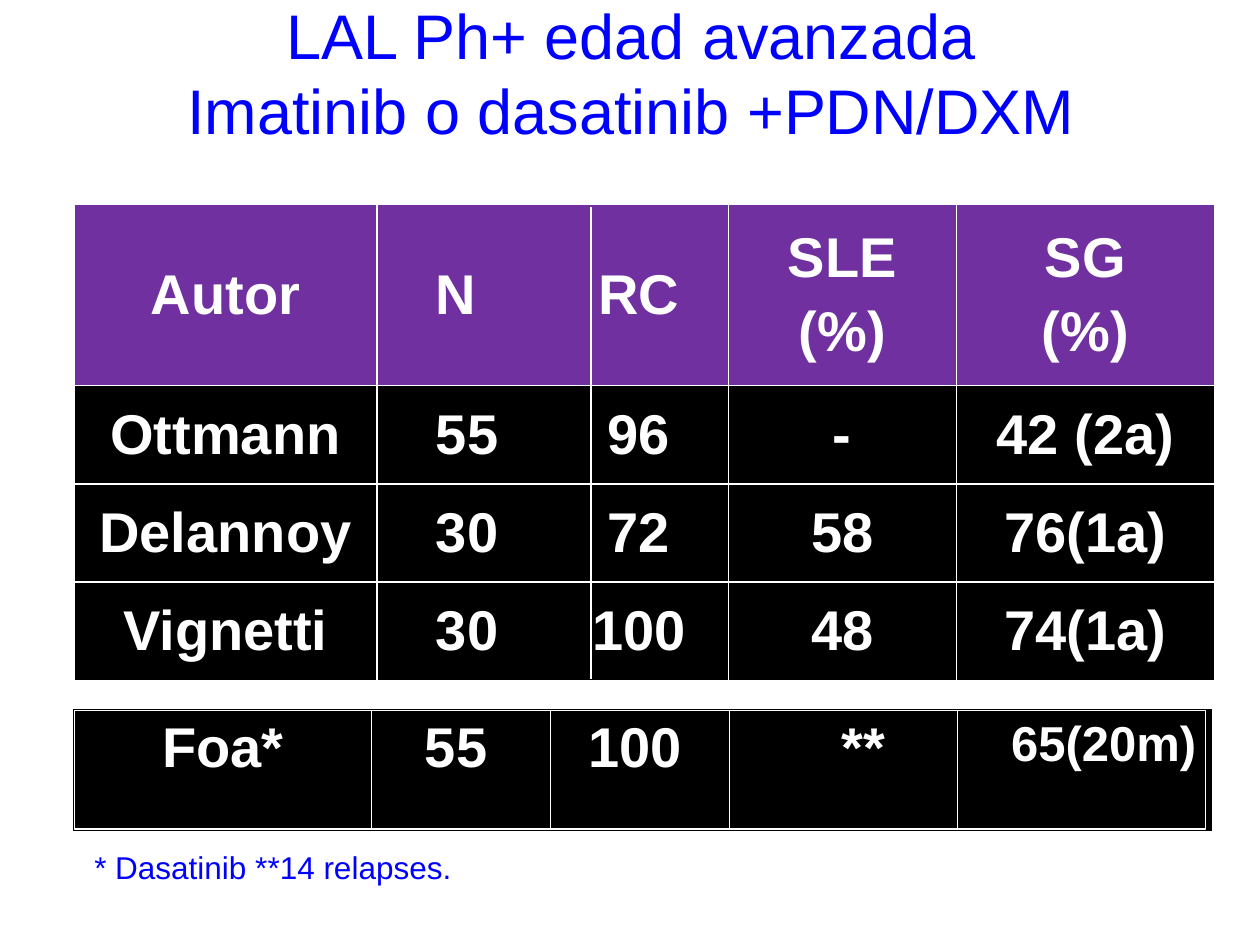
from lxml import etree
from pptx import Presentation
from pptx.dml.color import RGBColor
from pptx.enum.shapes import MSO_CONNECTOR, MSO_SHAPE
from pptx.enum.text import MSO_ANCHOR, MSO_AUTO_SIZE, PP_ALIGN
from pptx.oxml.ns import qn
from pptx.util import Inches, Pt

LINE = MSO_CONNECTOR.STRAIGHT
RECT = MSO_SHAPE.RECTANGLE
TOP, MIDDLE, BOTTOM = MSO_ANCHOR.TOP, MSO_ANCHOR.MIDDLE, MSO_ANCHOR.BOTTOM
NO_FIT, GROW = MSO_AUTO_SIZE.NONE, MSO_AUTO_SIZE.SHAPE_TO_FIT_TEXT
LEFT, CENTER = PP_ALIGN.LEFT, PP_ALIGN.CENTER

WHITE, BLACK, BLUE, PURPLE = "FFFFFF", "000000", "0000FF", "7030A0"
TRIALS = [
    ["Autor", "N\tRC", "SLE\n(%)", "SG\n(%)"],
    ["Ottmann", "55\t96", "-", "42 (2a)"],
    ["Delannoy", "30\t72", "58", "76(1a)"],
    ["Vignetti", "30\t100", "48", "74(1a)"],
]
FOA = ["Foa*", "55", "100", "**", "65(20m)"]


def color(code):
    """Turn a hex string into a colour."""
    return RGBColor.from_string(code)


def style(para, size, code, bold=False, align=CENTER):
    """Set the font and alignment of a paragraph."""
    para.alignment = align
    font = para.font
    font.name, font.size, font.bold = "Arial", Pt(size), bold
    font.color.rgb = color(code)


def add_tab(para, pos):
    """Give a paragraph one centred tab stop."""
    stops = etree.SubElement(para._p.get_or_add_pPr(), qn("a:tabLst"))
    etree.SubElement(stops, qn("a:tab"), pos=str(Inches(pos)), algn="ctr")


def border(cell, code, widths):
    """Draw the left, right, top and bottom borders of a cell."""
    props = cell._tc.get_or_add_tcPr()
    for spot, (side, width) in enumerate(zip("LRTB", widths)):
        edge = etree.Element(qn(f"a:ln{side}"), w=str(Pt(width)))
        fill = etree.SubElement(edge, qn("a:solidFill"))
        etree.SubElement(fill, qn("a:srgbClr"), val=code)
        props.insert(spot, edge)


def fill_cell(cell, text, back, size=32, anchor=MIDDLE):
    """Write one bold white cell, splitting it at a tab if it has one."""
    cell.fill.solid()
    cell.fill.fore_color.rgb = color(back)
    cell.vertical_anchor = anchor
    cell.text = text
    split = "\t" in text
    if split:
        cell.margin_left = Inches(0.47)
    for para in cell.text_frame.paragraphs:
        para.space_before = Pt(6.4)
        if split:
            add_tab(para, 1.61)
        style(para, size, WHITE, True, LEFT if split else CENTER)


def add_grid(slide, left, top, cols, rows):
    """Add a plain table with the given column widths and row heights."""
    frame = slide.shapes.add_table(
        len(rows), len(cols), Inches(left), Inches(top),
        Inches(sum(cols)), Inches(sum(rows)))
    table = frame.table
    table.first_row = table.horz_banding = False
    for col, width in zip(table.columns, cols):
        col.width = Inches(width)
    for row, height in zip(table.rows, rows):
        row.height = Inches(height)
    return table


def add_rule(slide, x, top, bottom):
    """Draw a thin white upright line."""
    rule = slide.shapes.add_connector(
        LINE, Inches(x), Inches(top), Inches(x), Inches(bottom))
    rule.line.color.rgb = color(WHITE)
    rule.line.width = Pt(0.75)
    etree.SubElement(rule._element.spPr, qn("a:effectLst"))


def add_text(slide, box, text, size, align, anchor=TOP, wrap=True, fit=NO_FIT):
    """Add a blue text box."""
    frame = slide.shapes.add_textbox(*map(Inches, box)).text_frame
    frame.word_wrap = wrap
    frame.auto_size = fit
    frame.vertical_anchor = anchor
    frame.text = text
    style(frame.paragraphs[0], size, BLUE, align=align)


def add_trials(slide, left, top):
    """Place the main table and the line between N and RC."""
    rows = [1.44, 0.78, 0.78, 0.78]
    table = add_grid(slide, left, top, [2.4, 2.79, 1.81, 2.05], rows)
    for r, texts in enumerate(TRIALS):
        for c, text in enumerate(texts):
            cell = table.cell(r, c)
            fill_cell(cell, text, BLACK if r else PURPLE)
            border(cell, WHITE, [1, 1, 1, 1])
    add_rule(slide, left + 4.1, top + 0.02, top + sum(rows) - 0.01)


def add_foa(slide, left, top, height):
    """Place the one-row table with its frame and upright lines."""
    table = add_grid(slide, left, top, [2.36, 1.34, 1.5, 2.12, 1.7], [height])
    last = len(FOA) - 1
    for c, text in enumerate(FOA):
        cell = table.cell(0, c)
        fill_cell(cell, text, BLACK, 28 if c == last else 32, TOP)
        border(cell, BLACK, [1 if c else 2.25, 2.25 if c == last else 1, 2.25, 2.25])
    frame = slide.shapes.add_shape(
        RECT, Inches(left), Inches(top), Inches(8.98), Inches(height))
    frame.shadow.inherit = False
    frame.fill.background()
    frame.line.color.rgb = color(WHITE)
    frame.line.width = Pt(0.75)
    for x in (2.36, 3.78, 5.2, 7.01):
        add_rule(slide, left + x, top, top + height)


def main():
    """Build and save the slide."""
    deck = Presentation()
    deck.slide_width, deck.slide_height = Inches(10), Inches(7.5)
    slide = deck.slides.add_slide(deck.slide_layouts[6])
    add_trials(slide, 0.59, 1.62)
    add_text(slide, (0.51, 0.44, 9, 0.78),
             "LAL Ph+ edad avanzada\vImatinib o dasatinib +PDN/DXM",
             36, CENTER, BOTTOM)
    add_foa(slide, 0.59, 5.64, 0.94)
    add_text(slide, (0.65, 6.68, 3.13, 0.4), "* Dasatinib **14 relapses.",
             18, LEFT, wrap=False, fit=GROW)
    deck.save("out.pptx")


if __name__ == "__main__":
    main()
